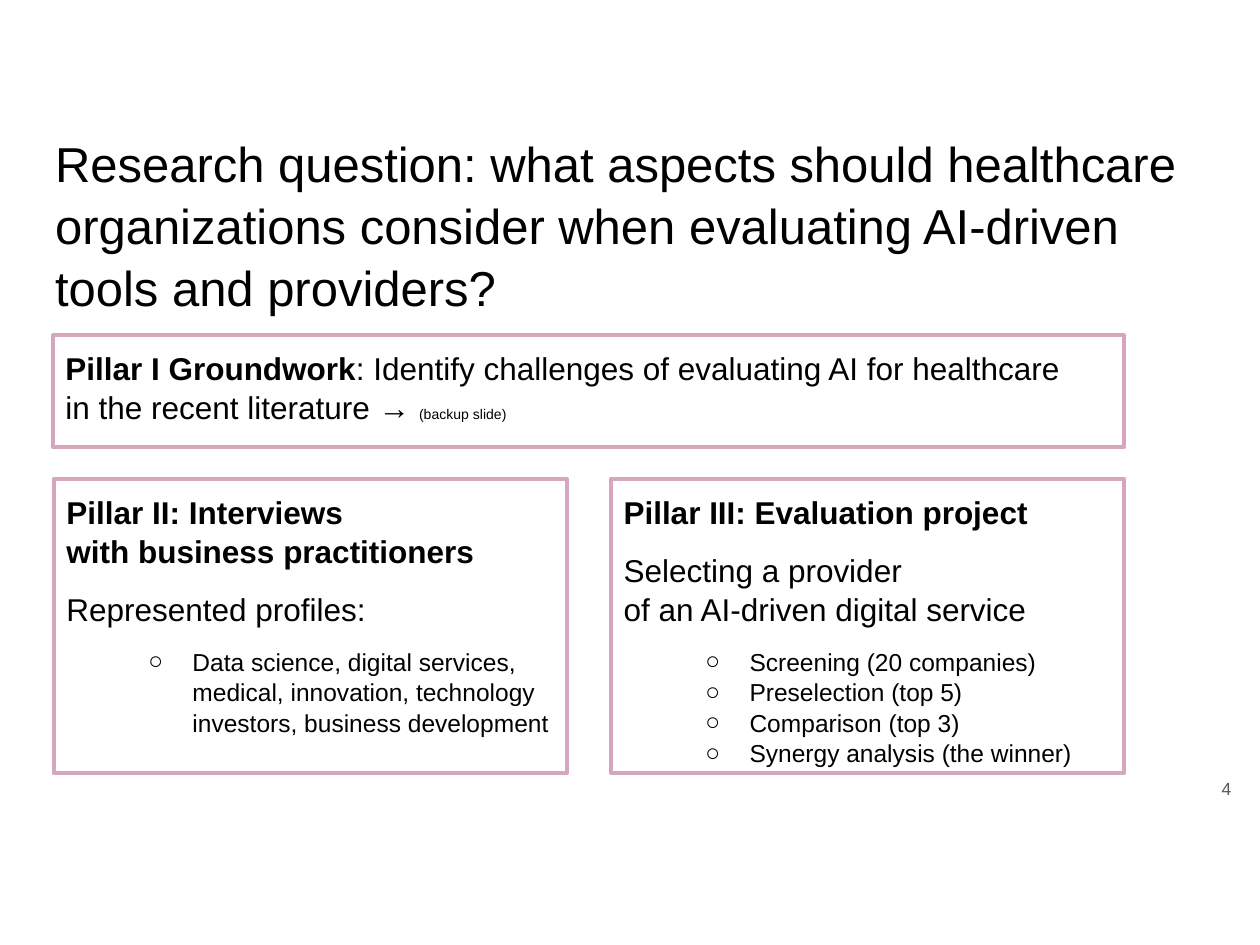
"""Build the research question slide with its three pillars."""
from lxml.etree import SubElement
from pptx import Presentation
from pptx.dml.color import RGBColor
from pptx.enum.shapes import MSO_SHAPE as Shape
from pptx.enum.text import MSO_ANCHOR as Anchor, MSO_AUTO_SIZE as AutoSize, PP_ALIGN as Align
from pptx.oxml.ns import qn
from pptx.util import Cm, Pt

COLORS = {"text": "000000", "border": "D5A6BD", "number": "595959"}
FONT = "Arial"
TWO_CONTENT = 3

TITLE = ("Research question: what aspects should healthcare organizations "
         "consider when evaluating AI-driven tools and providers?")
GROUNDWORK = [
    ("Pillar I Groundwork", 18, True),
    (": Identify challenges of evaluating AI for healthcare\nin the recent literature → ", 18, False),
    ("(backup slide)", 8, False),
]
PILLARS = [
    {
        "heading": "Pillar II: Interviews\nwith business practitioners",
        "lead": "Represented profiles:",
        "items": ["Data science, digital services, medical, innovation, "
                  "technology investors, business development"],
    },
    {
        "heading": "Pillar III: Evaluation project",
        "lead": "Selecting a provider\nof an AI-driven digital service",
        "items": ["Screening (20 companies)", "Preselection (top 5)",
                  "Comparison (top 3)", "Synergy analysis (the winner)"],
    },
]
PAGE_NUMBER = "4"

TITLE_BOX = (0.86, 2.39, 23.67, 2.82)
GROUNDWORK_BOX = (1.07, 6.76, 21.59, 2.26)
PILLAR_BOX = (1.09, 9.65, 10.34, 5.94)
PILLAR_STEP = 11.23
NUMBER_BOX = (23.55, 15.34, 1.52, 1.09)

FRAME_FORMAT = {
    "word_wrap": True, "auto_size": AutoSize.NONE, "vertical_anchor": Anchor.TOP,
    "margin_left": Cm(0.25), "margin_right": Cm(0.25),
    "margin_top": Cm(0.25), "margin_bottom": Cm(0.25),
}
PARAGRAPH_FORMAT = {"alignment": Align.LEFT, "line_spacing": 1.04,
                    "space_before": Pt(0), "space_after": Pt(0)}


def apply(target, values):
    for name, value in values.items():
        setattr(target, name, value)


def place(shape, box):
    apply(shape, dict(zip(("left", "top", "width", "height"), map(Cm, box))))


def prepare(shape, **changes):
    apply(shape.text_frame, FRAME_FORMAT | changes)
    return shape.text_frame


def outline(shape):
    shape.fill.background()
    shape.line.color.rgb = RGBColor.from_string(COLORS["border"])
    shape.line.width = Pt(2.25)


def set_bullet(paragraph, bullet):
    properties = paragraph._p.get_or_add_pPr()
    properties.set("marL", str(Cm(2.54) if bullet else 0))
    properties.set("indent", str(Cm(-0.89) if bullet else 0))
    if not bullet:
        SubElement(properties, qn("a:buNone"))
        return
    color = SubElement(properties, qn("a:buClr"))
    SubElement(color, qn("a:srgbClr"), val=COLORS["text"])
    SubElement(properties, qn("a:buFont"), typeface=FONT)
    SubElement(properties, qn("a:buChar"), char=bullet)


def write(paragraph, runs, color="text", bullet=None, **changes):
    set_bullet(paragraph, bullet)
    apply(paragraph, PARAGRAPH_FORMAT | changes)
    for text, size, bold in runs:
        for index, line in enumerate(text.split("\n")):
            if index:
                paragraph.add_line_break()
            run = paragraph.add_run()
            run.text = line
            apply(run.font, {"name": FONT, "size": Pt(size), "bold": bold})
            run.font.color.rgb = RGBColor.from_string(COLORS[color])


def fill_pillar(shape, pillar):
    frame = prepare(shape)
    write(frame.paragraphs[0], [(pillar["heading"], 18, True)])
    write(frame.add_paragraph(), [(pillar["lead"], 18, False)], space_before=Pt(10.8))
    for index, item in enumerate(pillar["items"]):
        write(frame.add_paragraph(), [(item, 14, False)], bullet="○",
              level=1, space_before=Pt(0 if index else 10))


def main():
    presentation = Presentation()
    apply(presentation, {"slide_width": Cm(25.4), "slide_height": Cm(19.05)})
    slide = presentation.slides.add_slide(presentation.slide_layouts[TWO_CONTENT])
    title, *bodies = slide.placeholders

    place(title, TITLE_BOX)
    write(prepare(title).paragraphs[0], [(TITLE, 28, False)], line_spacing=1.05)

    left, top, width, height = PILLAR_BOX
    for column, (body, pillar) in enumerate(zip(bodies, PILLARS)):
        place(body, (left + column * PILLAR_STEP, top, width, height))
        outline(body)
        fill_pillar(body, pillar)

    groundwork = slide.shapes.add_shape(Shape.RECTANGLE, *map(Cm, GROUNDWORK_BOX))
    groundwork.shadow.inherit = False
    outline(groundwork)
    write(prepare(groundwork).paragraphs[0], GROUNDWORK, space_after=Pt(10))

    number = slide.shapes.add_textbox(*map(Cm, NUMBER_BOX))
    frame = prepare(number, vertical_anchor=Anchor.MIDDLE)
    write(frame.paragraphs[0], [(PAGE_NUMBER, 10, False)], color="number", alignment=Align.RIGHT)

    presentation.save("out.pptx")


if __name__ == "__main__":
    main()
